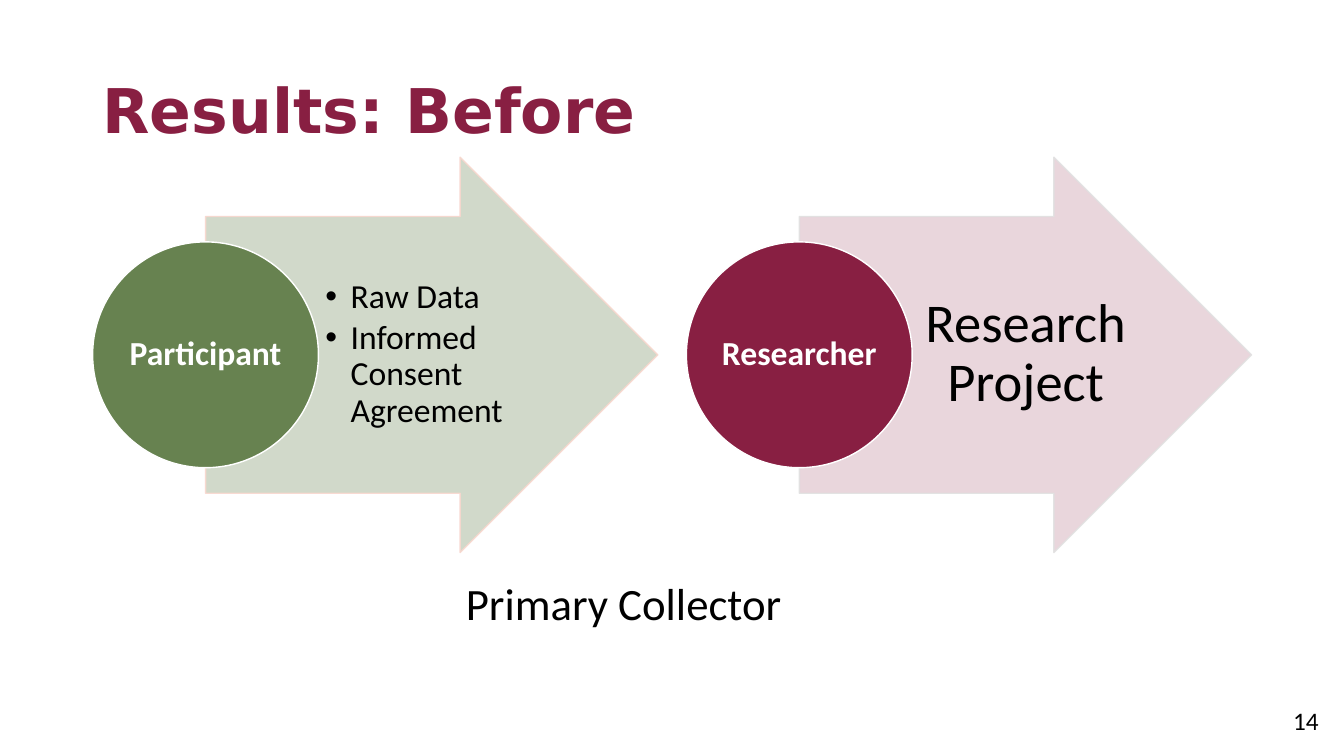
"""Build the slide that shows how data went from participant to researcher before."""
from lxml.etree import SubElement
from pptx import Presentation
from pptx.dml.color import RGBColor
from pptx.enum.shapes import MSO_SHAPE as SHAPE
from pptx.enum.text import MSO_ANCHOR as ANCHOR, MSO_AUTO_SIZE as AUTO, PP_ALIGN as ALIGN
from pptx.oxml.ns import qn
from pptx.util import Pt

COLORS = {
    "maroon": "881F42", "green": "678250", "peach": "F8D7CE",
    "gray": "E1E1E1", "white": "FFFFFF", "black": "000000",
}
CIRCLE = 161.3
CIRCLE_TOP = 172.8


def place(sp, left, top, width, height):
    """Move and size a shape, in points."""
    sp.left, sp.top, sp.width, sp.height = Pt(left), Pt(top), Pt(width), Pt(height)


def paint(color_format, name, opacity=100):
    """Set a colour by name, with an opacity in percent."""
    color_format.rgb = RGBColor.from_string(COLORS[name])
    if opacity < 100:
        clr = color_format._xFill.find(qn("a:srgbClr"))
        SubElement(clr, qn("a:alpha")).set("val", str(opacity * 1000))


def set_text(sp, lines, size, color="black", font="Calibri", bold=False,
             align=ALIGN.CENTER, spacing=0.9, anchor=ANCHOR.MIDDLE, insets=None):
    """Write the lines as paragraphs and format their runs."""
    tf = sp.text_frame
    tf.word_wrap = True
    tf.auto_size = AUTO.NONE
    tf.vertical_anchor = anchor
    if insets:
        tf.margin_left, tf.margin_top, tf.margin_right, tf.margin_bottom = map(Pt, insets)
    tf.text = "\n".join(lines)
    for p in tf.paragraphs:
        p.alignment = align
        p.line_spacing = spacing
        for r in p.runs:
            r.font.name = font
            r.font.size = Pt(size)
            r.font.bold = bold
            paint(r.font.color, color)


def add_label(slide, box, text, size, **style):
    """Add a text box at a place given as left, top, width, height."""
    sp = slide.shapes.add_textbox(*map(Pt, box))
    set_text(sp, [text], size, **style)


def add_bullets(sp, indent, gap):
    """Give each paragraph a hanging bullet."""
    for i, p in enumerate(sp.text_frame.paragraphs):
        p.space_before = Pt(gap if i else 0)
        pPr = p._p.get_or_add_pPr()
        pPr.set("marL", str(Pt(indent)))
        pPr.set("indent", str(-Pt(indent)))
        SubElement(pPr, qn("a:buFont")).set("typeface", "Arial")
        SubElement(pPr, qn("a:buChar")).set("char", "•")


def add_preset(slide, kind, box, fill, line, opacity=100, line_opacity=100):
    """Add a filled and outlined preset shape."""
    sp = slide.shapes.add_shape(kind, *map(Pt, box))
    sp.shadow.inherit = False
    sp.fill.solid()
    paint(sp.fill.fore_color, fill)
    if opacity < 100:
        clr = sp._element.spPr.find(qn("a:solidFill")).find(qn("a:srgbClr"))
        SubElement(clr, qn("a:alpha")).set("val", str(opacity * 1000))
    sp.line.width = Pt(1)
    paint(sp.line.color, line)
    if line_opacity < 100:
        clr = sp.line._ln.find(qn("a:solidFill")).find(qn("a:srgbClr"))
        SubElement(clr, qn("a:alpha")).set("val", str(line_opacity * 1000))
    return sp


def add_stage(slide, left, name, color, opacity, edge):
    """Add an arrow with a named circle over its tail."""
    arrow = add_preset(slide, SHAPE.RIGHT_ARROW, (left + CIRCLE / 2, 112.3, 323, 282.4),
                       color, edge, opacity, line_opacity=90)
    arrow.adjustments[0], arrow.adjustments[1] = 0.7, 0.5
    circle = add_preset(slide, SHAPE.OVAL, (left, CIRCLE_TOP, CIRCLE, CIRCLE), color, "white")
    set_text(circle, [name], 24, "white", bold=True, insets=(1.4,) * 4)


def stage_text_box(left):
    """Return the text area of the arrow of a stage."""
    return left + CIRCLE, 154.1, 157.7, 198


def main():
    """Build and save the slide."""
    prs = Presentation()
    prs.slide_width, prs.slide_height = Pt(960), Pt(540)
    slide = prs.slides.add_slide(prs.slide_layouts[1])
    title, body = slide.placeholders

    place(title, 66, 28.8, 828, 104.4)
    set_text(title, ["Results: Before"], 44, "maroon", "DejaVu Sans", True, ALIGN.LEFT)

    participant, researcher = 66.2, 490.3
    add_stage(slide, participant, "Participant", "green", 30, "peach")
    add_stage(slide, researcher, "Researcher", "maroon", 18, "gray")

    slide.shapes._spTree.append(body._element)
    place(body, *stage_text_box(participant))
    set_text(body, ["Raw Data", "Informed Consent Agreement"], 24,
             align=ALIGN.LEFT, insets=(5, 1.5, 2.2, 1.5))
    add_bullets(body, indent=18, gap=3.5)

    add_label(slide, stage_text_box(researcher), "Research Project", 39,
              insets=(8, 2.2, 3.6, 2.2))
    add_label(slide, (916.6, 500.4, 43.2, 28.8), "14", 18,
              align=ALIGN.LEFT, spacing=1, anchor=ANCHOR.TOP)
    add_label(slide, (66.2, 407.5, 758.9, 46), "Primary Collector", 32,
              spacing=1, anchor=ANCHOR.TOP)
    prs.save("out.pptx")


if __name__ == "__main__":
    main()
